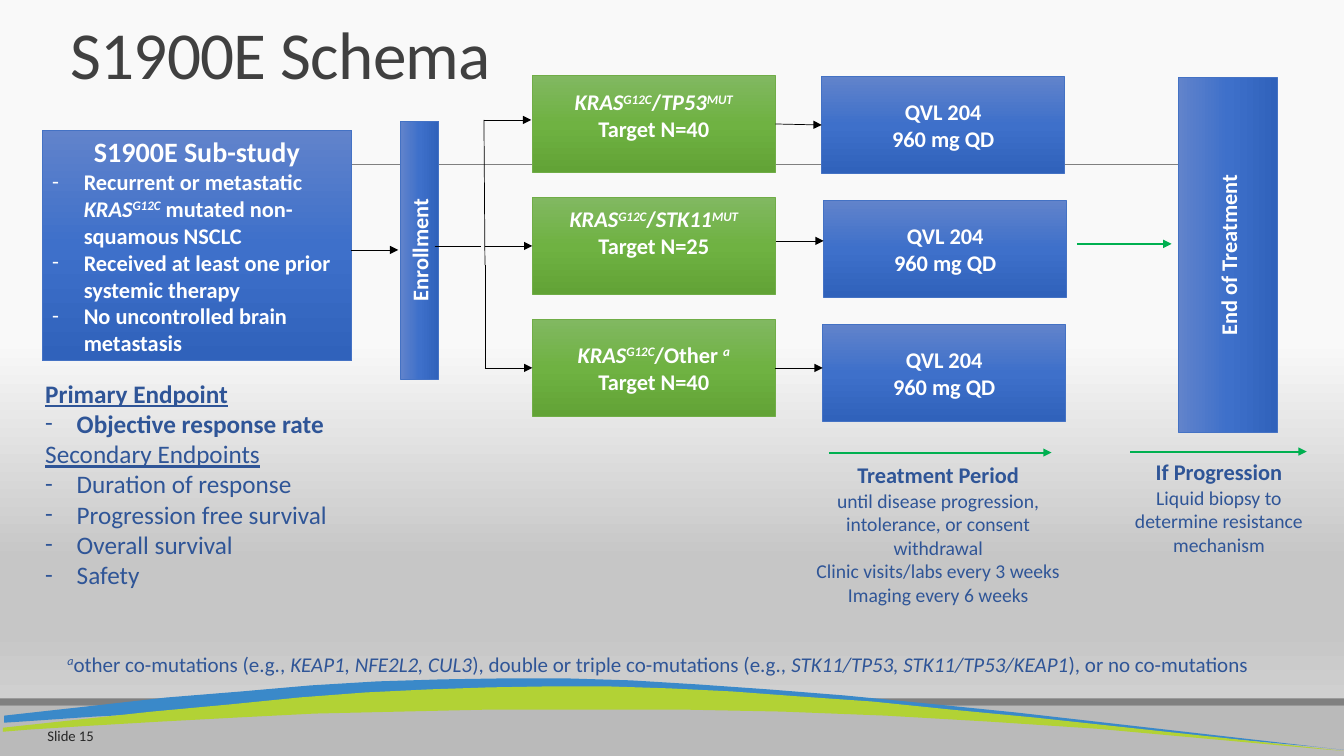
import dataclasses
import typing

import lxml.etree
import pptx
import pptx.dml.color
import pptx.enum.shapes
import pptx.enum.text
import pptx.oxml.ns
import pptx.util

PX = 9144
RGB = pptx.dml.color.RGBColor
ALIGN = pptx.enum.text.PP_ALIGN
ANCHOR = pptx.enum.text.MSO_ANCHOR
FIT = pptx.enum.text.MSO_AUTO_SIZE
RECT = pptx.enum.shapes.MSO_SHAPE.RECTANGLE
LINE = pptx.enum.shapes.MSO_CONNECTOR.STRAIGHT
qn = pptx.oxml.ns.qn

WHITE = RGB(0xFF, 0xFF, 0xFF)
BLACK = RGB(0, 0, 0)
DARK = RGB(0x40, 0x40, 0x40)
INK = RGB(0x26, 0x26, 0x26)
NAVY = RGB(0x2F, 0x55, 0x97)
LEAF = RGB(0x00, 0xB0, 0x50)
GRAY = RGB(0x80, 0x80, 0x80)
SILVER = RGB(0xBA, 0xBA, 0xBA)
SKY = RGB(0x3A, 0x89, 0xC9)
LIME = RGB(0xB2, 0xD2, 0x35)
BLUE = RGB(0x44, 0x72, 0xC4)
GREEN = RGB(0x70, 0xAD, 0x47)

Stops = tuple[tuple[int, RGB], ...]
BACK: Stops = ((45, RGB(0xF9, 0xF9, 0xF9)), (74, RGB(0xC6, 0xC6, 0xC6)),
               (83, RGB(0xC6, 0xC6, 0xC6)), (100, RGB(0xD9, 0xD9, 0xD9)))
SHADES: dict[RGB, Stops] = {
    BLUE: ((0, RGB(0x61, 0x83, 0xCB)), (50, RGB(0x3E, 0x70, 0xCA)), (100, RGB(0x30, 0x62, 0xBB))),
    GREEN: ((0, RGB(0x81, 0xB8, 0x61)), (50, RGB(0x6F, 0xB2, 0x42)), (100, RGB(0x62, 0xA3, 0x36))),
}


@dataclasses.dataclass
class Run:
    text: str
    style: str = ""


@dataclasses.dataclass
class Para:
    runs: list[Run]
    size: float = 16
    align: ALIGN = ALIGN.CENTER
    dash: bool = False


@dataclasses.dataclass
class Box:
    left: int
    top: int
    width: int
    height: int
    paras: list[Para]
    tone: RGB = BLUE
    turn: int = 0
    foot: int = 5


@dataclasses.dataclass
class Note:
    left: int
    top: int
    width: int
    height: int
    paras: list[Para]
    color: RGB = NAVY
    anchor: ANCHOR = ANCHOR.TOP
    fit: FIT = FIT.SHAPE_TO_FIT_TEXT


@dataclasses.dataclass
class Link:
    x1: int
    y1: int
    x2: int
    y2: int
    color: RGB = BLACK
    width: float = 0.5
    head: bool = True
    start: typing.Any = None
    end: typing.Any = None


def plain(text: str, style: str = "", size: float = 16, align: ALIGN = ALIGN.CENTER) -> Para:
    return Para([Run(text, style)], size, align)


def item(*runs: Run, size: float = 16) -> Para:
    return Para(list(runs), size, ALIGN.LEFT, True)


def shade(owner: typing.Any, fill: typing.Any, stops: Stops) -> None:
    fill.gradient()
    grad = next(owner._element.iter(qn("a:gradFill")))
    steps = grad.find(qn("a:gsLst"))
    for old in list(steps):
        steps.remove(old)
    for pos, color in stops:
        step = lxml.etree.SubElement(steps, qn("a:gs"), pos=str(pos * 1000))
        lxml.etree.SubElement(step, qn("a:srgbClr"), val=str(color))
    grad.find(qn("a:lin")).set("ang", "5400000")


def write(frame: typing.Any, paras: list[Para], color: RGB) -> None:
    frame.word_wrap = True
    for num, para in enumerate(paras):
        line = frame.add_paragraph() if num else frame.paragraphs[0]
        line.alignment = para.align
        if para.dash:
            props = line._p.get_or_add_pPr()
            props.set("marL", "285750")
            props.set("indent", "-285750")
            lxml.etree.SubElement(props, qn("a:buFont"), typeface="Calibri")
            lxml.etree.SubElement(props, qn("a:buChar"), char="-")
        for run in para.runs:
            part = line.add_run()
            part.text = run.text
            form = {"name": "Calibri", "size": pptx.util.Pt(para.size), "bold": "b" in run.style,
                    "italic": "i" in run.style, "underline": "u" in run.style}
            for key, value in form.items():
                setattr(part.font, key, value)
            part.font.color.rgb = color
            if "^" in run.style:
                part._r.get_or_add_rPr().set("baseline", "30000")


def block(slide: typing.Any, box: Box) -> typing.Any:
    shape = slide.shapes.add_shape(RECT, *(n * PX for n in (box.left, box.top, box.width, box.height)))
    shape.shadow.inherit = False
    shape.rotation = box.turn
    shade(shape, shape.fill, SHADES[box.tone])
    shape.line.color.rgb = box.tone
    shape.line.width = pptx.util.Pt(0.5)
    shape.text_frame.vertical_anchor = ANCHOR.MIDDLE
    shape.text_frame.margin_bottom = box.foot * PX
    write(shape.text_frame, box.paras, WHITE)
    return shape


def label(slide: typing.Any, note: Note) -> typing.Any:
    shape = slide.shapes.add_textbox(*(n * PX for n in (note.left, note.top, note.width, note.height)))
    write(shape.text_frame, note.paras, note.color)
    form = {"vertical_anchor": note.anchor, "auto_size": note.fit}
    for key, value in form.items():
        setattr(shape.text_frame, key, value)
    return shape


def join(slide: typing.Any, link: Link) -> None:
    wire = slide.shapes.add_connector(LINE, *(n * PX for n in (link.x1, link.y1, link.x2, link.y2)))
    wire.line.color.rgb = link.color
    wire.line.width = pptx.util.Pt(link.width)
    if link.head:
        lxml.etree.SubElement(wire.line._get_or_add_ln(), qn("a:tailEnd"), type="triangle")
    lxml.etree.SubElement(wire._element.spPr, qn("a:effectLst"))
    if link.start is not None:
        wire.begin_connect(link.start, 3)
    if link.end is not None:
        wire.end_connect(link.end, 1)


def paint(shape: typing.Any, color: RGB) -> None:
    shape.shadow.inherit = False
    shape.fill.solid()
    shape.fill.fore_color.rgb = color
    shape.line.fill.background()


def wave(slide: typing.Any, color: RGB, dots: list[tuple[int, int]]) -> None:
    form = slide.shapes.build_freeform(*dots[0], scale=PX)
    form.add_line_segments(dots[1:], close=True)
    paint(form.convert_to_shape(), color)


def scene(slide: typing.Any) -> None:
    shade(slide, slide.background.fill, BACK)
    for top, height, color in ((700, 50, SILVER), (693, 7, GRAY)):
        paint(slide.shapes.add_shape(RECT, 0, top * PX, 1333 * PX, height * PX), color)
    join(slide, Link(66, 163, 1221, 163, GRAY, head=False))
    wave(slide, SKY, [
        (4, 710), (85, 701), (165, 692), (239, 686), (308, 680), (374, 676), (438, 674), (500, 673),
        (562, 673), (626, 675), (692, 679), (763, 684), (838, 690), (920, 698), (1009, 707),
        (1333, 744), (1306, 741), (1074, 720), (962, 711), (852, 705), (744, 701), (639, 699),
        (537, 698), (439, 699), (345, 701), (256, 703), (171, 707), (93, 711), (20, 716), (4, 717)])
    wave(slide, LIME, [
        (3, 722), (68, 715), (151, 706), (227, 699), (297, 692), (363, 687), (425, 684), (485, 682),
        (544, 681), (603, 681), (664, 683), (726, 686), (793, 691), (865, 696), (943, 704),
        (1027, 712), (1333, 745), (1308, 743), (1088, 723), (982, 716), (878, 710), (776, 706),
        (676, 704), (579, 704), (486, 704), (397, 706), (312, 708), (233, 712), (158, 716),
        (90, 720), (27, 724), (3, 726)])


def main() -> None:
    deck = pptx.Presentation()
    deck.slide_width, deck.slide_height = 1333 * PX, 750 * PX
    slide = deck.slides.add_slide(deck.slide_layouts[6])
    scene(slide)

    title = label(slide, Note(60, 0, 1153, 97, [plain("S1900E Schema", "", 48, ALIGN.LEFT)],
                              DARK, ANCHOR.BOTTOM, FIT.NONE))
    title.text_frame.paragraphs[0].line_spacing = 0.85
    title.text_frame.paragraphs[0].runs[0]._r.get_or_add_rPr().set("spc", "-50")
    label(slide, Note(0, 710, 103, 40, [plain("Slide 15", "", 10.5, ALIGN.RIGHT)],
                      INK, ANCHOR.MIDDLE, FIT.NONE))

    gene = [Run("KRAS", "bi"), Run("G12C", "bi^")]
    block(slide, Box(42, 129, 307, 229, [
        plain("S1900E Sub-study", "b", 20),
        item(Run("Recurrent or metastatic ", "b"), *gene, Run(" mutated non-squamous NSCLC", "b")),
        item(Run("Received at least one prior systemic therapy", "b")),
        item(Run("No uncontrolled brain metastasis", "b"))]))
    arms = [
        ([Run("/", "b"), Run("TP53", "bi"), Run("MUT", "bi^")], 40, 22, 815),
        ([Run("/", "b"), Run("STK11", "bi"), Run("MUT", "bi^")], 25, 32, 817),
        ([Run("/Other ", "b"), Run("a", "bi^")], 40, 5, 816)]
    groups, drugs = [], []
    for row, (tail, count, foot, left) in enumerate(arms):
        groups.append(block(slide, Box(528, 75 + 121 * row, 241, 96, [
            Para(gene + tail), plain(f"Target N={count}", "b")], GREEN, foot=foot)))
        drugs.append(block(slide, Box(left, 76 + 123 * row, 241, 96, [
            plain("QVL 204", "b"), plain("960 mg QD", "b")])))
    block(slide, Box(288, 229, 256, 38, [plain("Enrollment", "b")], turn=270))
    block(slide, Box(1042, 204, 352, 98, [plain("End of Treatment", "b")], turn=270))

    for link in (
            Link(431, 244, 477, 244, head=False),
            Link(481, 263, 480, 119, head=False),
            Link(481, 365, 481, 263, head=False),
            Link(348, 248, 395, 248),
            Link(480, 119, 527, 119),
            Link(481, 244, 528, 244, end=groups[1]),
            Link(481, 365, 528, 365, end=groups[2]),
            Link(769, 123, 815, 124, start=groups[0], end=drugs[0]),
            Link(770, 239, 817, 239),
            Link(769, 365, 816, 365, start=groups[2]),
            Link(822, 449, 1043, 449, LEAF, 1.5),
            Link(1121, 448, 1296, 448, LEAF, 1.5),
            Link(1068, 242, 1162, 242, LEAF, 1.5)):
        join(slide, link)

    goals = ("Duration of response", "Progression free survival", "Overall survival", "Safety")
    for note in (
            Note(793, 453, 275, 155, [
                plain("Treatment Period", "b"),
                plain("until disease progression, intolerance, or consent withdrawal", size=14),
                plain("Clinic visits/labs every 3 weeks", size=14),
                plain("Imaging every 6 weeks", size=14)]),
            Note(1108, 450, 202, 108, [
                plain("If Progression", "b"),
                plain("Liquid biopsy to determine resistance mechanism", size=14)]),
            Note(57, 641, 1273, 35, [Para([
                Run("a", "i^"), Run("other co-mutations (e.g., "), Run("KEAP1, NFE2L2, CUL3", "i"),
                Run("), double or triple co-mutations (e.g., "),
                Run("STK11/TP53, STK11/TP53/KEAP1", "i"), Run("), or no co-mutations")],
                15, ALIGN.LEFT)]),
            Note(35, 370, 322, 252, [
                plain("Primary Endpoint", "bu", 18, ALIGN.LEFT),
                item(Run("Objective response rate", "b"), size=18),
                plain("Secondary Endpoints", "u", 18, ALIGN.LEFT),
                *(item(Run(goal), size=18) for goal in goals)])):
        label(slide, note)
    deck.save("out.pptx")


if __name__ == "__main__":
    main()
